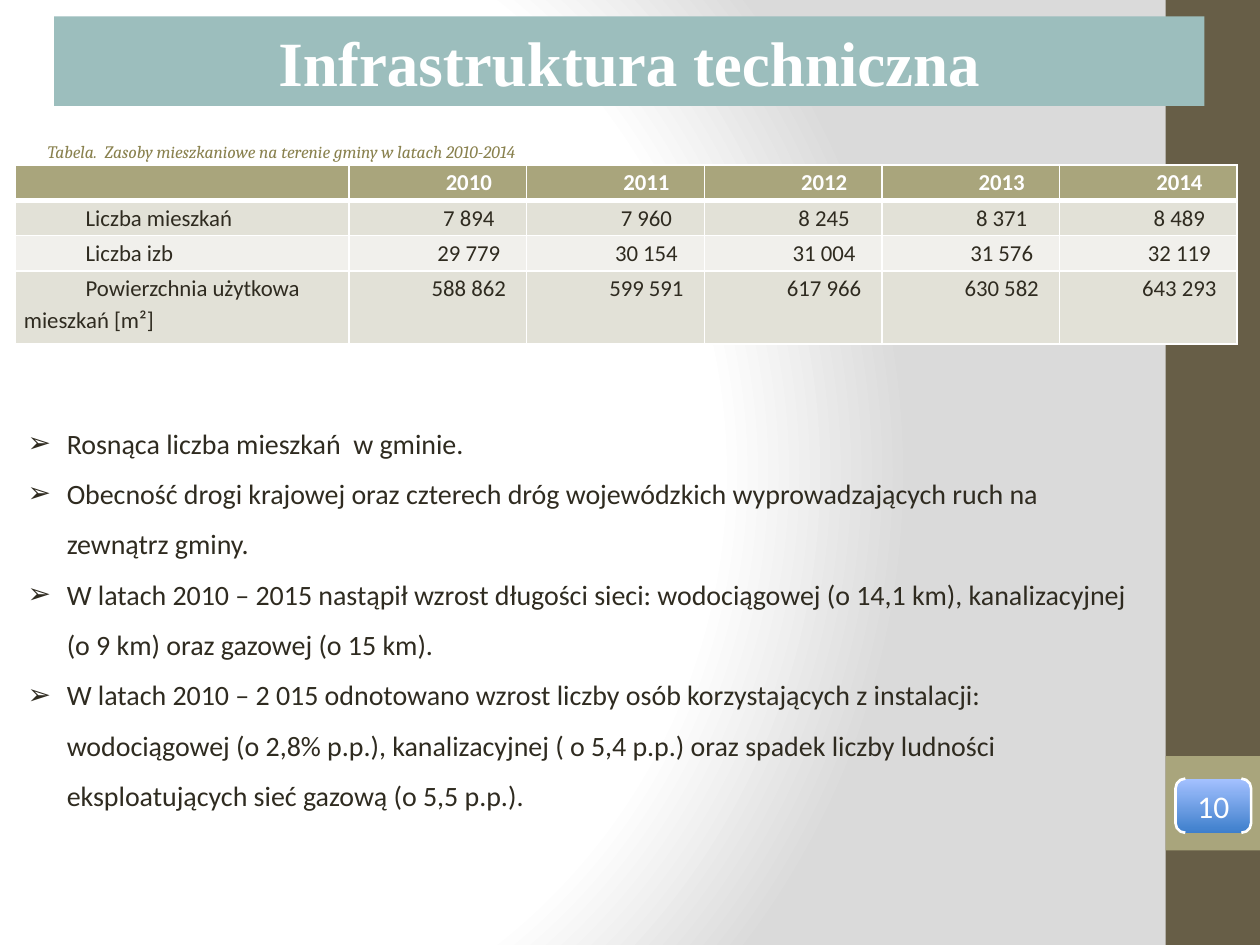
"""Build the slide on technical infrastructure: housing table and key findings."""
import lxml.etree
import pptx
import pptx.dml.color
import pptx.enum.shapes
import pptx.enum.text
import pptx.oxml
import pptx.oxml.ns
import pptx.util

SHAPE = pptx.enum.shapes.MSO_SHAPE
ALIGN = pptx.enum.text.PP_ALIGN
ANCHOR = pptx.enum.text.MSO_ANCHOR
WIDTH, HEIGHT = 10, 7.5
COLOURS = {
    "white": "FFFFFF", "grey": "DADADA", "bar": "675E47", "olive": "A9A57C",
    "teal": "9CBEBD", "caption": "89814E", "text": "2F2B20",
    "odd": "E2E1D7", "even": "F1F0EC",
}

TITLE = "Infrastruktura techniczna"
CAPTION = "Tabela.  Zasoby mieszkaniowe na terenie gminy w latach 2010-2014"
PAGE_NUMBER = "10"
ROWS = [
    ("", "2010", "2011", "2012", "2013", "2014"),
    ("Liczba mieszkań", "7 894", "7 960", "8 245", "8 371", "8 489"),
    ("Liczba izb", "29 779", "30 154", "31 004", "31 576", "32 119"),
    ("Powierzchnia użytkowa mieszkań [m²]", "588 862", "599 591", "617 966", "630 582", "643 293"),
]
FINDINGS = [
    "Rosnąca liczba mieszkań  w gminie.",
    "Obecność drogi krajowej oraz czterech dróg wojewódzkich wyprowadzających ruch na "
    "zewnątrz gminy.",
    "W latach 2010 – 2015 nastąpił wzrost długości sieci: wodociągowej (o 14,1 km), "
    "kanalizacyjnej (o 9 km) oraz gazowej (o 15 km).",
    "W latach 2010 – 2 015 odnotowano wzrost liczby osób korzystających z instalacji: "
    "wodociągowej (o 2,8% p.p.), kanalizacyjnej ( o 5,4 p.p.) oraz spadek liczby ludności "
    "eksploatujących sieć gazową (o 5,5 p.p.).",
]
COLUMN_WIDTHS = [2.65] + [1.41] * 5
ROW_HEIGHTS = [0.28] * 3 + [0.58]


def rgb(name):
    return pptx.dml.color.RGBColor.from_string(COLOURS[name])


def inches(*lengths):
    return [pptx.util.Inches(length) for length in lengths]


def place(shape, left, top, width, height):
    shape.left, shape.top, shape.width, shape.height = inches(left, top, width, height)


def paint(shape, colour):
    shape.fill.solid()
    shape.fill.fore_color.rgb = rgb(colour)


def style(para, size, name, colour, align=None, spacing=None, bold=False, italic=False):
    para.alignment = align
    para.line_spacing = spacing
    para.font.size, para.font.name = pptx.util.Pt(size), name
    para.font.bold, para.font.italic = bold, italic
    para.font.color.rgb = rgb(colour)


def indent(para, left, first):
    properties = para._p.get_or_add_pPr()
    properties.set("marL", str(pptx.util.Inches(left)))
    properties.set("indent", str(pptx.util.Inches(first)))
    return properties


def add_plain_shape(page, kind, *box):
    shape = page.shapes.add_shape(kind, *inches(*box))
    shape.shadow.inherit = False
    shape.line.fill.background()
    return shape


def set_background(page):
    page.background.fill.solid()
    properties = page._element.cSld.bg.bgPr
    stops = "".join(
        f'<a:gs pos="{share * 1000}"><a:srgbClr val="{COLOURS[name]}"/></a:gs>'
        for share, name in ((0, "white"), (75, "white"), (100, "grey")))
    gradient = pptx.oxml.parse_xml(
        f'<a:gradFill {pptx.oxml.ns.nsdecls("a")} rotWithShape="1"><a:gsLst>{stops}</a:gsLst>'
        '<a:path path="circle"><a:fillToRect l="20000" t="50000" r="100000" b="50000"/></a:path>'
        '</a:gradFill>')
    properties.replace(properties[0], gradient)


def add_sidebar(page):
    side = 0.75
    left = WIDTH - side
    bar = add_plain_shape(page, SHAPE.RECTANGLE, left, 0, side, HEIGHT)
    paint(bar, "bar")
    square = add_plain_shape(page, SHAPE.RECTANGLE, left, HEIGHT * 0.8, side, side)
    paint(square, "olive")
    bracket = add_plain_shape(page, SHAPE.DOUBLE_BRACKET, 9.33, 6.18, 0.6, 0.43)
    bracket.adjustments[0] = 0.18
    bracket.line.color.rgb = rgb("white")
    bracket.line.width = pptx.util.Pt(1.5)
    frame = bracket.text_frame
    frame.margin_left = frame.margin_right = frame.margin_top = frame.margin_bottom = 0
    frame.vertical_anchor = ANCHOR.MIDDLE
    frame.text = PAGE_NUMBER
    style(frame.paragraphs[0], 18, "Calibri", "white", ALIGN.CENTER)
    for position, shape in enumerate((bar, square, bracket), start=2):
        page.shapes._spTree.insert(position, shape._element)


def add_title(page):
    title = page.shapes.title
    place(title, 0.43, 0.13, 9.13, 0.71)
    paint(title, "teal")
    title.text_frame.text = TITLE
    style(title.text_frame.paragraphs[0], 36, "Times New Roman", "white", ALIGN.CENTER, bold=True)


def add_caption(page):
    frame = page.shapes.add_textbox(*inches(0.28, 0.99, 5.89, 0.35)).text_frame
    frame.word_wrap = True
    frame.text = CAPTION
    style(frame.paragraphs[0], 10, "Cambria", "caption", ALIGN.JUSTIFY, 1.5, italic=True)


def add_findings(page):
    body = page.placeholders[1]
    place(body, 0.12, 3.2, 9.06, 3.33)
    frame = body.text_frame
    frame.text = "\n".join(FINDINGS)
    frame.vertical_anchor = ANCHOR.TOP
    frame.auto_size = pptx.enum.text.MSO_AUTO_SIZE.NONE
    for para in frame.paragraphs:
        para.space_before = pptx.util.Pt(0)
        properties = indent(para, 0.31, -0.31)
        bullet = lxml.etree.SubElement(properties, pptx.oxml.ns.qn("a:buChar"))
        bullet.set("char", "➢")
        style(para, 16, "Calibri", "text", ALIGN.LEFT, 1.5)


def set_borders(cell, bottom_width):
    properties = cell._tc.get_or_add_tcPr()
    for position, (side, width) in enumerate((("L", 1), ("R", 1), ("T", 1), ("B", bottom_width))):
        properties.insert(position, pptx.oxml.parse_xml(
            f'<a:ln{side} {pptx.oxml.ns.nsdecls("a")} w="{pptx.util.Pt(width)}"><a:solidFill>'
            f'<a:srgbClr val="{COLOURS["white"]}"/></a:solidFill></a:ln{side}>'))


def add_housing_table(page):
    box = inches(0.12, 1.31, sum(COLUMN_WIDTHS), sum(ROW_HEIGHTS))
    table = page.shapes.add_table(len(ROWS), len(COLUMN_WIDTHS), *box).table
    for column, width in zip(table.columns, COLUMN_WIDTHS):
        column.width = pptx.util.Inches(width)
    for index, (row, height, texts) in enumerate(zip(table.rows, ROW_HEIGHTS, ROWS)):
        row.height = pptx.util.Inches(height)
        header = index == 0
        for number, (cell, text) in enumerate(zip(row.cells, texts)):
            paint(cell, "olive" if header else ("even", "odd")[index % 2])
            set_borders(cell, 3 if header else 1)
            cell.margin_left = cell.margin_right = pptx.util.Inches(0.07)
            cell.margin_top = cell.margin_bottom = 0
            cell.text = text
            para = cell.text_frame.paragraphs[0]
            indent(para, 0, 0.49)
            style(para, 13, "Calibri", "white" if header else "text",
                  ALIGN.CENTER if number else ALIGN.LEFT, 1.15, bold=header)


def main():
    deck = pptx.Presentation()
    deck.slide_width, deck.slide_height = inches(WIDTH, HEIGHT)
    page = deck.slides.add_slide(deck.slide_layouts[1])
    set_background(page)
    add_sidebar(page)
    add_title(page)
    add_caption(page)
    add_findings(page)
    add_housing_table(page)
    deck.save("out.pptx")


if __name__ == "__main__":
    main()
